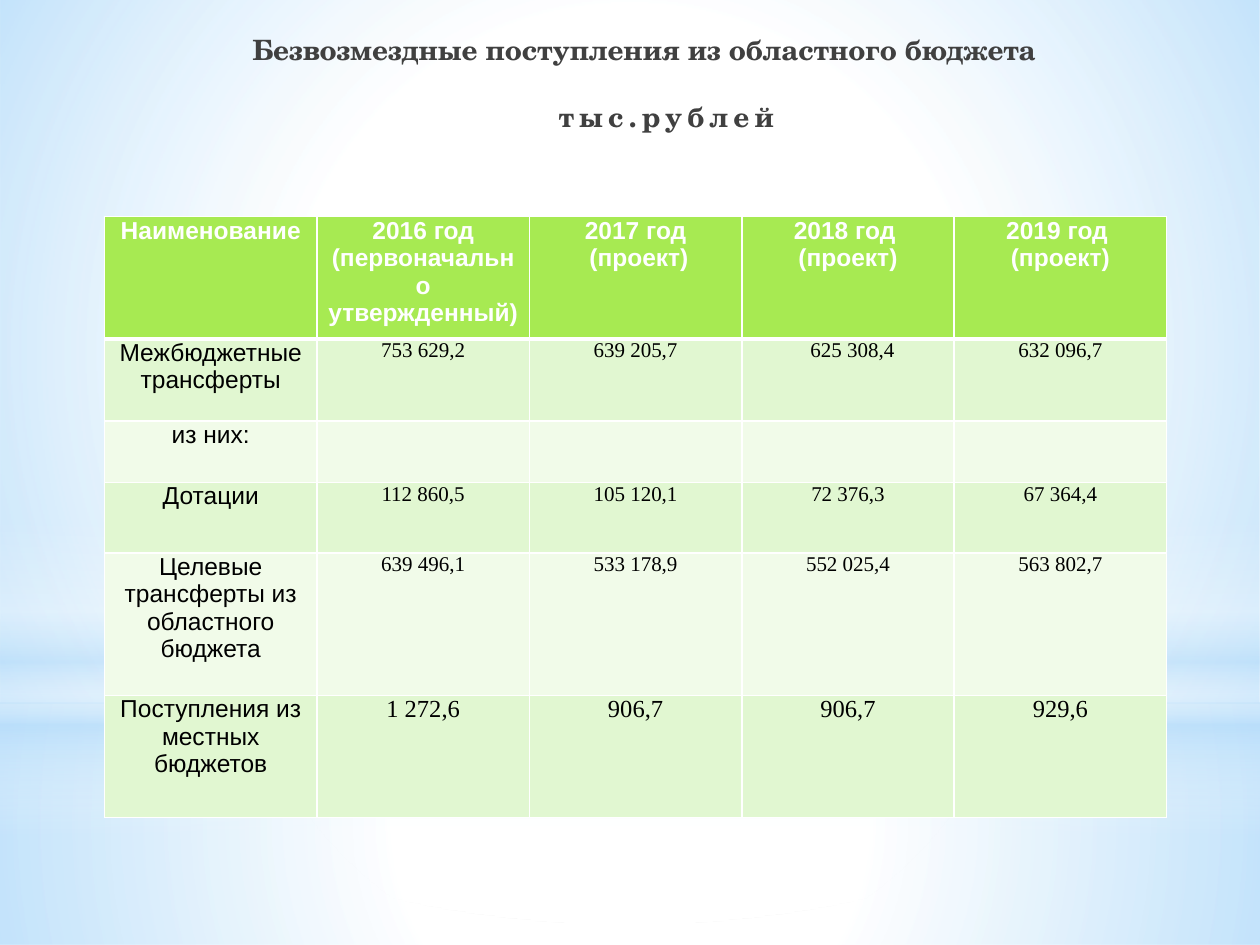
from collections import namedtuple

from pptx import Presentation
from pptx.dml.color import RGBColor
from pptx.enum.shapes import MSO_SHAPE
from pptx.enum.text import MSO_ANCHOR, PP_ALIGN
from pptx.oxml import parse_xml
from pptx.oxml.ns import nsdecls, qn
from pptx.util import Inches, Pt

WHITE = RGBColor(0xFF, 0xFF, 0xFF)
BLACK = RGBColor(0, 0, 0)
DARK_GRAY = RGBColor(0x40, 0x40, 0x40)
SKY = RGBColor(0xB4, 0xDC, 0xFA)
GREEN = RGBColor(0xA7, 0xEA, 0x52)
BANDS = (RGBColor(0xE1, 0xF7, 0xD1), RGBColor(0xF1, 0xFB, 0xE9))

WIDTH, HEIGHT = 10, 7.5
Box = namedtuple("Box", "left top width height")

HEADINGS = ["Наименование", "2016 год (первоначально утвержденный)",
            "2017 год\n (проект)", "2018 год \n(проект)", "2019 год \n(проект)"]
# Label, values, size of the values, first-line indents of the values
ROWS = [
    ("Межбюджетные трансферты", ["753 629,2", "639 205,7", "625 308,4", "632 096,7"],
     12, (0, -0.07, 0.07, -0.07)),
    ("из них:", [""] * 4, 12, (0,) * 4),
    ("Дотации", ["112 860,5", "105 120,1", "72 376,3", "67 364,4"], 12, (0,) * 4),
    ("Целевые трансферты из областного бюджета",
     ["639 496,1", "533 178,9", "552 025,4", "563 802,7"], 12, (0,) * 4),
    ("Поступления из местных бюджетов", ["1 272,6", "906,7", "906,7", "929,6"],
     14, (0,) * 4),
]
ROW_HEIGHTS = (0.97, 0.65, 0.49, 0.56, 1.13, 0.97)


def inches(box):
    return [Inches(length) for length in box]


def write_paragraph(paragraph, text, size=14, font="Arial", color=BLACK, bold=False,
                    margin=0, indent=0, spacing=0, before=0):
    paragraph.alignment = PP_ALIGN.CENTER
    paragraph.space_before = Pt(before)
    properties = paragraph._p.get_or_add_pPr()
    properties.set("marL", str(Inches(margin)))
    properties.set("indent", str(Inches(indent)))
    run = paragraph.add_run()
    run.text = text
    run.font.size = Pt(size)
    run.font.name = font
    run.font.bold = bold
    run.font.color.rgb = color
    if spacing:
        run._r.get_or_add_rPr().set("spc", str(spacing * 100))


def add_gradient_shape(slide, kind, box, stops, angle=None):
    """Stops are (position %, colour, opacity %); without an angle it is radial."""
    shape = slide.shapes.add_shape(kind, *inches(box))
    shape.shadow.inherit = False
    shape.line.fill.background()
    shape.fill.background()
    stop_xml = "".join(
        f'<a:gs pos="{position * 1000}"><a:srgbClr val="{color}">'
        f'<a:alpha val="{opacity * 1000}"/></a:srgbClr></a:gs>'
        for position, color, opacity in stops)
    if angle is None:
        direction = ('<a:path path="circle"><a:fillToRect l="50000" t="50000" '
                     'r="50000" b="50000"/></a:path>')
    else:
        direction = f'<a:lin ang="{angle * 60000}" scaled="0"/>'
    gradient = parse_xml(f'<a:gradFill {nsdecls("a")} rotWithShape="1">'
                         f'<a:gsLst>{stop_xml}</a:gsLst>{direction}</a:gradFill>')
    properties = shape._element.spPr
    properties.replace(properties.find(qn("a:noFill")), gradient)


def add_backdrop(slide, box):
    def band(top, height):
        return Box(box.left, box.top + top * box.height, box.width, height * box.height)

    horizon = 0.744
    rectangle = MSO_SHAPE.RECTANGLE
    # Ground and sky
    add_gradient_shape(slide, rectangle, band(horizon, 1 - horizon),
                       [(0, WHITE, 91), (37, WHITE, 76), (100, SKY, 79)])
    add_gradient_shape(slide, rectangle, band(0, horizon),
                       [(0, WHITE, 89), (48, WHITE, 62), (100, SKY, 79)])
    # Horizon haze
    add_gradient_shape(slide, rectangle, band(0.55, 0.333),
                       [(0, WHITE, 0), (29, WHITE, 30), (45, SKY, 40),
                        (55, WHITE, 26), (65, SKY, 60), (100, WHITE, 0)], angle=90)
    # Central glow
    add_gradient_shape(slide, MSO_SHAPE.OVAL, band(0.233, horizon),
                       [(0, WHITE, 100), (56, WHITE, 0)])


def add_title(slide, box):
    frame = slide.shapes.add_textbox(*inches(box)).text_frame
    frame.word_wrap = True
    frame.vertical_anchor = MSO_ANCHOR.TOP
    style = dict(size=16, font="TeX Gyre Schola", color=DARK_GRAY, bold=True, margin=0.35)
    write_paragraph(frame.paragraphs[0], "Безвозмездные поступления из областного бюджета",
                    indent=-0.35, **style)
    write_paragraph(frame.add_paragraph(), "тыс.рублей", spacing=3, before=19, **style)


def fill_cell(cell, text, fill, bottom_border=1, **style):
    cell.margin_left = cell.margin_right = Inches(0.07)
    cell.margin_top = cell.margin_bottom = 0
    properties = cell._tc.get_or_add_tcPr()
    for side, width in zip("LRTB", (1, 1, 1, bottom_border)):
        properties.append(parse_xml(
            f'<a:ln{side} {nsdecls("a")} w="{Pt(width)}"><a:solidFill>'
            f'<a:srgbClr val="{WHITE}"/></a:solidFill></a:ln{side}>'))
    cell.fill.solid()
    cell.fill.fore_color.rgb = fill
    if text:
        frame = cell.text_frame
        for index, line in enumerate(text.split("\n")):
            paragraph = frame.add_paragraph() if index else frame.paragraphs[0]
            write_paragraph(paragraph, line, **style)


def add_budget_table(slide, box):
    table = slide.shapes.add_table(len(ROW_HEIGHTS), len(HEADINGS), *inches(box)).table
    table.first_row = table.horz_banding = False
    for column in table.columns:
        column.width = Inches(box.width / len(HEADINGS))
    for row, height in zip(table.rows, ROW_HEIGHTS):
        row.height = Inches(height * box.height / sum(ROW_HEIGHTS))
    # Header row
    for column, heading in enumerate(HEADINGS):
        fill_cell(table.cell(0, column), heading, GREEN, bottom_border=3,
                  color=WHITE, bold=True)
    # Body rows
    for row, (label, values, size, indents) in enumerate(ROWS, 1):
        fill = BANDS[(row - 1) % 2]
        fill_cell(table.cell(row, 0), label, fill, bottom_border=1)
        for column, (value, indent) in enumerate(zip(values, indents), 1):
            fill_cell(table.cell(row, column), value, fill, size=size,
                      font="Times New Roman", indent=indent)


def main():
    presentation = Presentation()
    presentation.slide_width, presentation.slide_height = Inches(WIDTH), Inches(HEIGHT)
    slide = presentation.slides.add_slide(presentation.slide_layouts[6])
    slide.background.fill.solid()
    slide.background.fill.fore_color.rgb = WHITE
    add_backdrop(slide, Box(0, 0, WIDTH, HEIGHT))
    add_budget_table(slide, Box(0.83, 1.72, 8.43, sum(ROW_HEIGHTS)))
    add_title(slide, Box(1.14, 0.21, 7.95, 0.94))
    presentation.save("out.pptx")


if __name__ == "__main__":
    main()
